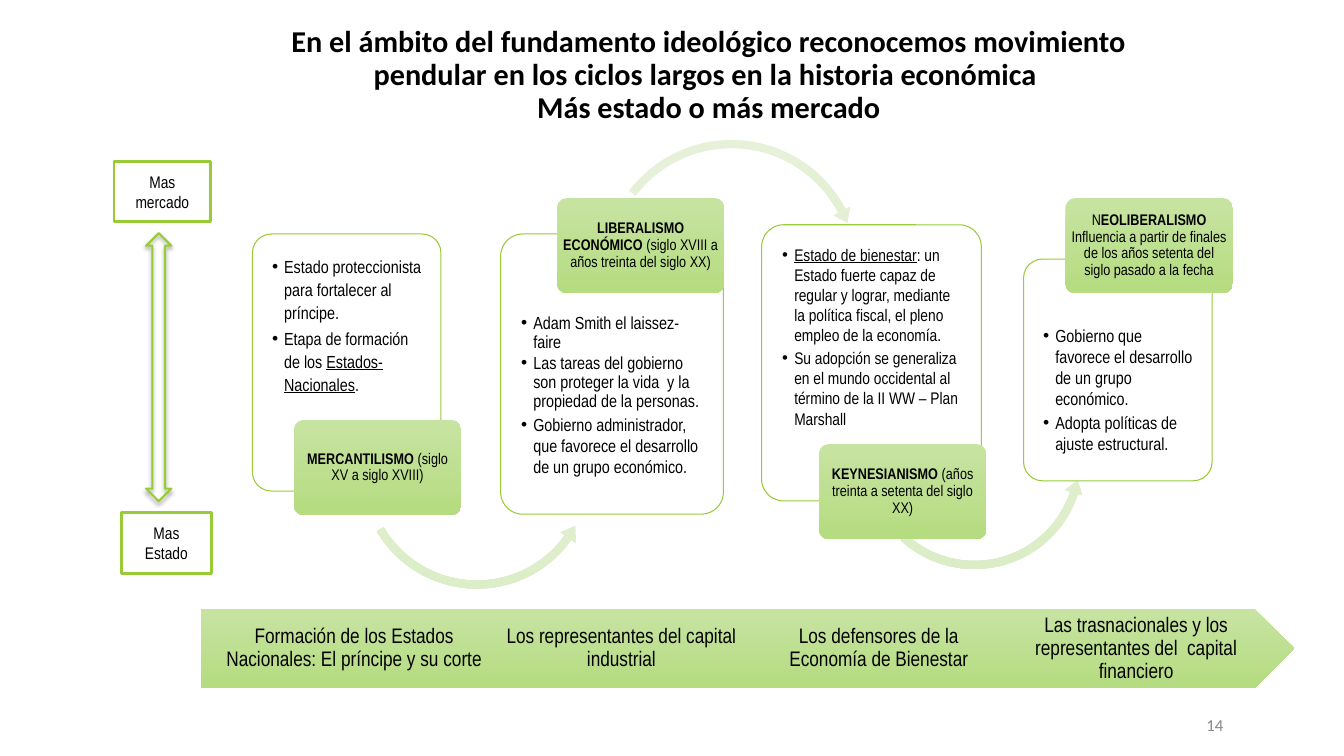
from math import cos, radians, sin, tan

from lxml import etree
from pptx import Presentation
from pptx.dml.color import RGBColor
from pptx.enum.shapes import MSO_SHAPE
from pptx.enum.text import MSO_ANCHOR, MSO_AUTO_SIZE, PP_ALIGN
from pptx.oxml.ns import qn
from pptx.util import Inches, Pt

WIDE, HIGH = Inches(13.33), Inches(7.5)
ROUND, RECT = MSO_SHAPE.ROUNDED_RECTANGLE, MSO_SHAPE.RECTANGLE
PLATE, CHEVRON = MSO_SHAPE.PENTAGON, MSO_SHAPE.CHEVRON
DOUBLE = MSO_SHAPE.UP_DOWN_ARROW
TOP, MIDDLE = MSO_ANCHOR.TOP, MSO_ANCHOR.MIDDLE
LEFT, CENTER, RIGHT = PP_ALIGN.LEFT, PP_ALIGN.CENTER, PP_ALIGN.RIGHT
FIXED = MSO_AUTO_SIZE.NONE

BLACK = RGBColor(0x00, 0x00, 0x00)
WHITE = RGBColor(0xFF, 0xFF, 0xFF)
GRAY = RGBColor(0x88, 0x88, 0x88)
GREEN = RGBColor(0x99, 0xCB, 0x38)
LABEL = (RGBColor(0xC7, 0xE3, 0xA2), RGBColor(0xB5, 0xDC, 0x80))
PALE = (RGBColor(0xE8, 0xF2, 0xDB), RGBColor(0xDB, 0xED, 0xC6))
NARROW, SANS = "Arial Narrow", "Calibri"

TITLE = ("En el ámbito del fundamento ideológico reconocemos movimiento "
         "pendular en los ciclos largos en la historia económica \v"
         "Más estado o más mercado")

CARDS = [
    ((18.78, 30.95, 14.03, 34), 0.14, 12.5, [
        (1.1, [("Estado proteccionista para fortalecer al príncipe.", "")]),
        (1.1, [("Etapa de formación de los ", ""),
               ("Estados-Nacionales", "u"), (".", "")])]),
    ((37.25, 30.95, 16.58, 37.07), 0.73, 12.5, [
        (0.9, [("Adam Smith el laissez-faire", "")]),
        (0.9, [("Las tareas del gobierno son proteger la vida  y la "
                "propiedad de la personas.", "")]),
        (1.0, [("Gobierno administrador, que favorece el desarrollo de un "
                "grupo económico.", "")])]),
    ((56.67, 29.73, 16.35, 36.53), 0.13, 12, [
        (1.0, [("Estado de bienestar", "u"),
               (": un Estado fuerte capaz de regular y lograr, mediante la "
                "política fiscal, el pleno empleo de la economía.", "")]),
        (1.0, [("Su adopción se generaliza en el mundo occidental al "
                "término de la II WW – Plan Marshall", "")])]),
    ((76.16, 34.27, 14.03, 29.33), 0.6, 12.5, [
        (1.0, [("Gobierno que favorece el desarrollo de un grupo "
                "económico.", "")]),
        (1.0, [("Adopta políticas de ajuste estructural.", "")])]),
]

ERAS = [
    (21.87, 55.55, [("MERCANTILISMO ", "b"), ("(siglo XV a siglo XVIII)", "")]),
    (41.45, 26.2, [("LIBERALISMO ECONÓMICO ", "b"),
                   ("(siglo XVIII a años treinta del siglo XX)", "")]),
    (60.94, 58.74, [("KEYNESIANISMO", "b"),
                    (" (años treinta a setenta del siglo XX)", "")]),
    (79.28, 26.2, [("N", ""), ("EOLIBERALISMO ", "b"),
                   ("Influencia a partir de finales de los años setenta "
                    "del siglo pasado a la fecha", "")]),
]

ARCS = [
    ((26.48, 46.53), 32, 7.7, 14.8, (141.9, 27.7, 21)),
    ((44.49, 17.87), 35.33, 353.9, 16.47, (223.5, 338.6, 344.4)),
    ((63.99, 45.73), 30.27, 0, 13.87, (132.4, 18.1, 11.4)),
]

STEPS = [
    "Formación de los Estados Nacionales: El príncipe y su corte",
    "Los representantes del capital industrial",
    "Los defensores de la Economía de Bienestar",
    "Las trasnacionales y los representantes del  capital financiero",
]

POLES = [
    ((9.04, 67.82, 6.68, 8), "Mas Estado"),
    ((8.48, 21.33, 7.2, 8), "Mas mercado"),
]


def across(share):
    return int(WIDE * share / 100)


def down(share):
    return int(HIGH * share / 100)


def place(box):
    x, y, w, h = box
    return across(x), down(y), across(w), down(h)


def shade(shape, tones):
    shape.fill.gradient()
    shape.fill.gradient_angle = 270
    for stop, tone in zip(shape.fill.gradient_stops, tones):
        stop.color.rgb = tone
    shape.line.fill.background()


def draw(slide, kind, box, adjust=()):
    shape = slide.shapes.add_shape(kind, *place(box))
    shape.shadow.inherit = False
    for n, value in enumerate(adjust):
        shape.adjustments[n] = value
    return shape


def edge(shape, width):
    shape.line.color.rgb = GREEN
    shape.line.width = Pt(width)


def bullet(para):
    props = para._p.get_or_add_pPr()
    props.set("marL", str(Inches(0.12)))
    props.set("indent", str(-Inches(0.12)))
    font = etree.SubElement(props, qn("a:buFont"))
    font.set("typeface", "Arial")
    etree.SubElement(props, qn("a:buChar")).set("char", "•")


def write(shape, paras, size, insets, anchor=MIDDLE, align=CENTER,
          face=NARROW, color=BLACK, dots=False):
    frame = shape.text_frame
    frame.word_wrap = True
    frame.auto_size = FIXED
    frame.vertical_anchor = anchor
    (frame.margin_left, frame.margin_top,
     frame.margin_right, frame.margin_bottom) = map(Inches, insets)
    for n, (space, parts) in enumerate(paras):
        para = frame.add_paragraph() if n else frame.paragraphs[0]
        para.text = parts[0][0]
        for text, _ in parts[1:]:
            para.add_run().text = text
        para.alignment = align
        para.line_spacing = space
        para.space_before = Pt(1.9 if n else 0)
        if dots:
            bullet(para)
        styles = [style for _, style in parts]
        for k, run in enumerate(para.runs):
            style = styles[min(k, len(styles) - 1)]
            run.font.name = face
            run.font.size = Pt(size)
            run.font.color.rgb = color
            run.font.bold = "b" in style
            run.font.underline = "u" in style


def card(slide, box, top, size, paras):
    shape = draw(slide, ROUND, box, [0.1])
    shape.fill.solid()
    shape.fill.fore_color.rgb = WHITE
    edge(shape, 0.75)
    write(shape, paras, size, (0.14, top, 0.14, 0.14), TOP, LEFT, dots=True)


def swing(slide, corner, side, spin, ray, angles):
    start, end, tip = angles
    size = down(side)

    def spot(reach, angle, lean=0):
        turn = radians(angle)
        return (int(size / 2 + down(reach) * (cos(turn) - lean * sin(turn))),
                int(size / 2 + down(reach) * (sin(turn) + lean * cos(turn))))

    def curve(reach, first, last):
        half = (last - first) / 2
        lean = tan(radians(half) / 4) * 4 / 3
        for a in (first, first + half):
            b = a + half
            yield "a:cubicBezTo", [spot(reach, a, lean),
                                   spot(reach, b, -lean), spot(reach, b)]

    outer, inner = ray + 0.53, ray - 0.53
    head = [(ray + 1.2, end), (ray, tip), (ray - 1.2, end), (inner, end)]
    moves = [("a:moveTo", [spot(outer, start)]),
             *curve(outer, start, end),
             *[("a:lnTo", [spot(*point)]) for point in head],
             *curve(inner, end, start),
             ("a:close", [])]
    build = slide.shapes.build_freeform(0, 0)
    build.add_line_segments([(size, 0), (size, size)])
    shape = build.convert_to_shape(across(corner[0]), down(corner[1]))
    trace = shape._element.spPr.find(".//" + qn("a:path"))
    for child in list(trace):
        trace.remove(child)
    for tag, points in moves:
        move = etree.SubElement(trace, qn(tag))
        for x, y in points:
            etree.SubElement(move, qn("a:pt"), x=str(x), y=str(y))
    shape.rotation = spin
    shape.shadow.inherit = False
    shade(shape, PALE)


def era(slide, x, y, parts):
    shape = draw(slide, ROUND, (x, y, 12.45, 12.57), [0.1])
    shade(shape, LABEL)
    write(shape, [(0.9, parts)], 11, [0.02] * 4)


def step(slide, n, text):
    kind = CHEVRON if n else PLATE
    shape = draw(slide, kind, (14.94 + 19.15 * n, 80.57, 23.93, 10.42), [0.5])
    shade(shape, LABEL)
    write(shape, [(0.9, [(text, "")])], 15, (0.07, 0.04, 0.02, 0.04))


def pole(slide, box, text):
    shape = draw(slide, RECT, box)
    shape.fill.background()
    edge(shape, 2)
    write(shape, [(1.0, [(text, "")])], 12, [0.1] * 4, TOP)


def scale(slide):
    shape = draw(slide, DOUBLE, (10.87, 30.83, 1.88, 35.47), [0.5, 0.5])
    shape.fill.background()
    edge(shape, 1.5)
    glow = shape._element.spPr.find(qn("a:effectLst"))
    cast = etree.SubElement(glow, qn("a:outerShdw"), blurRad=str(Pt(3.1)),
                            dist=str(Pt(1.8)), dir="5400000", rotWithShape="0")
    tone = etree.SubElement(cast, qn("a:srgbClr"), val="000000")
    etree.SubElement(tone, qn("a:alpha"), val="35000")


def main():
    deck = Presentation()
    deck.slide_width, deck.slide_height = WIDE, HIGH
    slide = deck.slides.add_slide(deck.slide_layouts[5])
    title = slide.shapes.title
    title.left, title.top, title.width, title.height = place(
        (17.04, 3.55, 71.4, 12.93))
    pad = (0.1, 0.05, 0.1, 0.05)
    write(title, [(0.9, [(TITLE, "b")])], 21.6, pad, face=SANS)
    number = slide.shapes.add_textbox(*place((81.03, 93.2, 10.73, 5.33)))
    write(number, [(1.0, [("14", "")])], 12, pad, align=RIGHT, face=SANS,
          color=GRAY)
    for n, data in enumerate(CARDS):
        card(slide, *data)
        if n < len(ARCS):
            swing(slide, *ARCS[n])
        era(slide, *ERAS[n])
    for box, text in POLES:
        pole(slide, box, text)
    scale(slide)
    for n, text in enumerate(STEPS):
        step(slide, n, text)
    deck.save("out.pptx")


if __name__ == "__main__":
    main()
